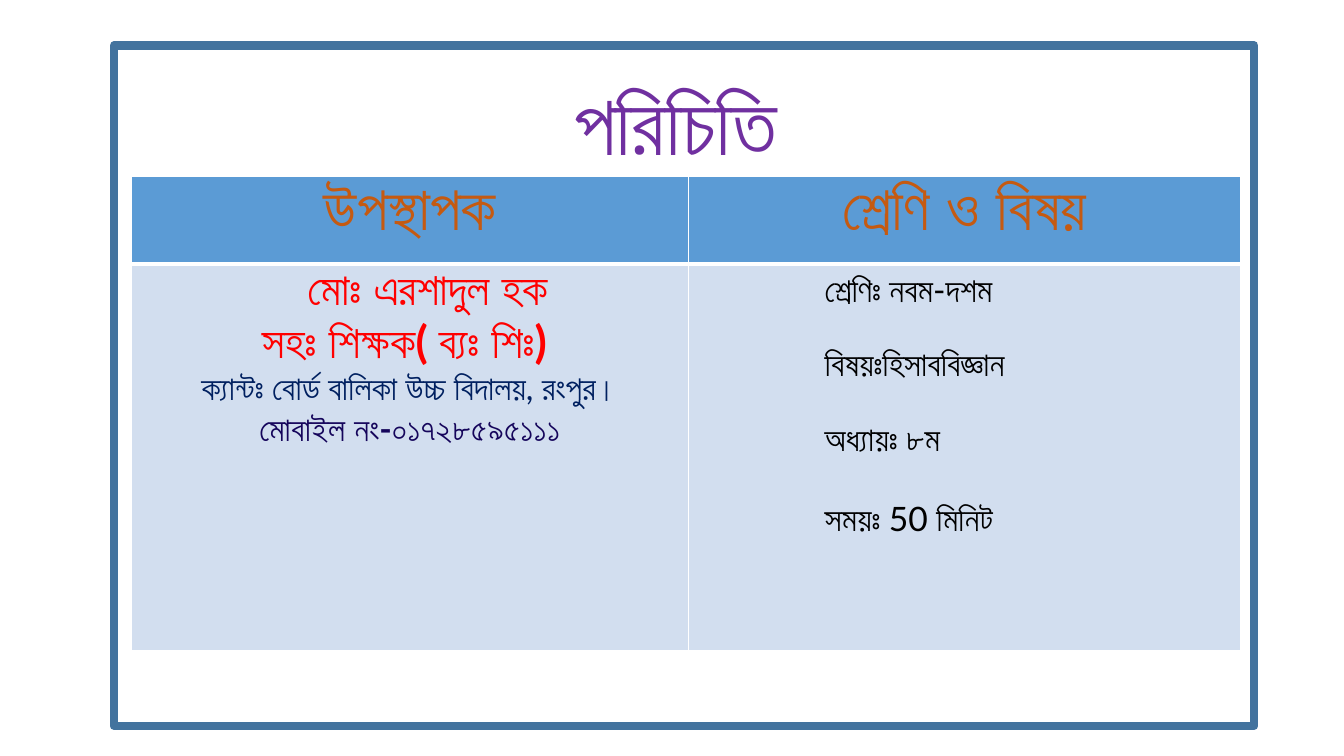
from lxml.etree import SubElement
from pptx import Presentation
from pptx.dml.color import RGBColor
from pptx.enum.shapes import MSO_SHAPE
from pptx.enum.text import PP_ALIGN
from pptx.oxml.ns import qn
from pptx.util import Inches, Pt

FONT = "Lato"
HEADERS = ["উপস্থাপক", "শ্রেণি ও বিষয়"]
PRESENTER = [
    ("মোঃ এরশাদুল হক", 32, "FF0000", True, 0.35),
    ("সহঃ শিক্ষক( ব্যঃ শিঃ) ", 32, "FF0000", True, 0),
    ("ক্যান্টঃ বোর্ড বালিকা উচ্চ বিদালয়, রংপুর।", 24, "002060", False, 0),
    ("মোবাইল নং-০১৭২৮৫৯৫১১১", 24, "15055B", True, 0),
]
LESSON = ["শ্রেণিঃ নবম-দশম", "বিষয়ঃহিসাববিজ্ঞান", "অধ্যায়ঃ ৮ম", "সময়ঃ 50 মিনিট"]


def color(value):
    return RGBColor.from_string(value)


def write(paragraph, text, size, text_color, bold=False,
          align=PP_ALIGN.CENTER, indent=0):
    paragraph.text = text
    paragraph.alignment = align
    if indent:
        paragraph._p.get_or_add_pPr().set("marL", str(Inches(indent)))
    for run in paragraph.runs:
        run.font.name = FONT
        run.font.size = Pt(size)
        run.font.bold = bold
        run.font.color.rgb = color(text_color)


def add_paragraph(text_frame, index):
    return text_frame.add_paragraph() if index else text_frame.paragraphs[0]


def style_cell(cell, fill, bottom_width):
    properties = cell._tc.get_or_add_tcPr()
    for side, width in (("L", 1), ("R", 1), ("T", 1), ("B", bottom_width)):
        line = SubElement(properties, qn(f"a:ln{side}"), w=str(Pt(width)))
        line_fill = SubElement(line, qn("a:solidFill"))
        SubElement(line_fill, qn("a:srgbClr"), val="FFFFFF")
    cell.fill.solid()
    cell.fill.fore_color.rgb = color(fill)


def add_table(slide, left, top, column_widths, row_heights):
    table = slide.shapes.add_table(
        2, 2, Inches(left), Inches(top),
        Inches(sum(column_widths)), Inches(sum(row_heights))).table
    for column, width in zip(table.columns, column_widths):
        column.width = Inches(width)
    for row, height in zip(table.rows, row_heights):
        row.height = Inches(height)

    for index, header in enumerate(HEADERS):
        cell = table.cell(0, index)
        style_cell(cell, "5B9BD5", 3)
        style_cell_below = table.cell(1, index)
        style_cell(style_cell_below, "D2DEEF", 1)
        write(cell.text_frame.paragraphs[0], header, 44, "C55A11", True)

    presenter_frame = table.cell(1, 0).text_frame
    for index, (text, size, text_color, bold, indent) in enumerate(PRESENTER):
        write(add_paragraph(presenter_frame, index), text, size, text_color,
              bold, indent=indent)

    lesson_frame = table.cell(1, 1).text_frame
    for index, text in enumerate(LESSON):
        paragraph = add_paragraph(lesson_frame, index)
        write(paragraph, text, 24, "000000", align=PP_ALIGN.JUSTIFY, indent=1.25)
        paragraph.space_after = Pt(29)


def add_title(slide, left, top, width, height):
    title = slide.shapes.add_textbox(
        Inches(left), Inches(top), Inches(width), Inches(height))
    title.text_frame.word_wrap = True
    write(title.text_frame.paragraphs[0], "পরিচিতি", 60, "7030A0")


def add_frame(slide, left, top, width, height):
    frame = slide.shapes.add_shape(
        MSO_SHAPE.RECTANGLE,
        Inches(left), Inches(top), Inches(width), Inches(height))
    frame.shadow.inherit = False
    frame.fill.background()
    frame.line.color.rgb = color("43739E")
    frame.line.width = Pt(6)


def main():
    presentation = Presentation()
    presentation.slide_width = Inches(13.33)
    presentation.slide_height = Inches(7.5)
    slide = presentation.slides.add_slide(presentation.slide_layouts[6])
    add_table(slide, 1.3, 1.75, [5.53, 5.47], [0.87, 3.83])
    add_title(slide, 4.43, 0.66, 4.54, 1.11)
    add_frame(slide, 1.13, 0.45, 11.31, 6.75)
    presentation.save("out.pptx")


if __name__ == "__main__":
    main()
